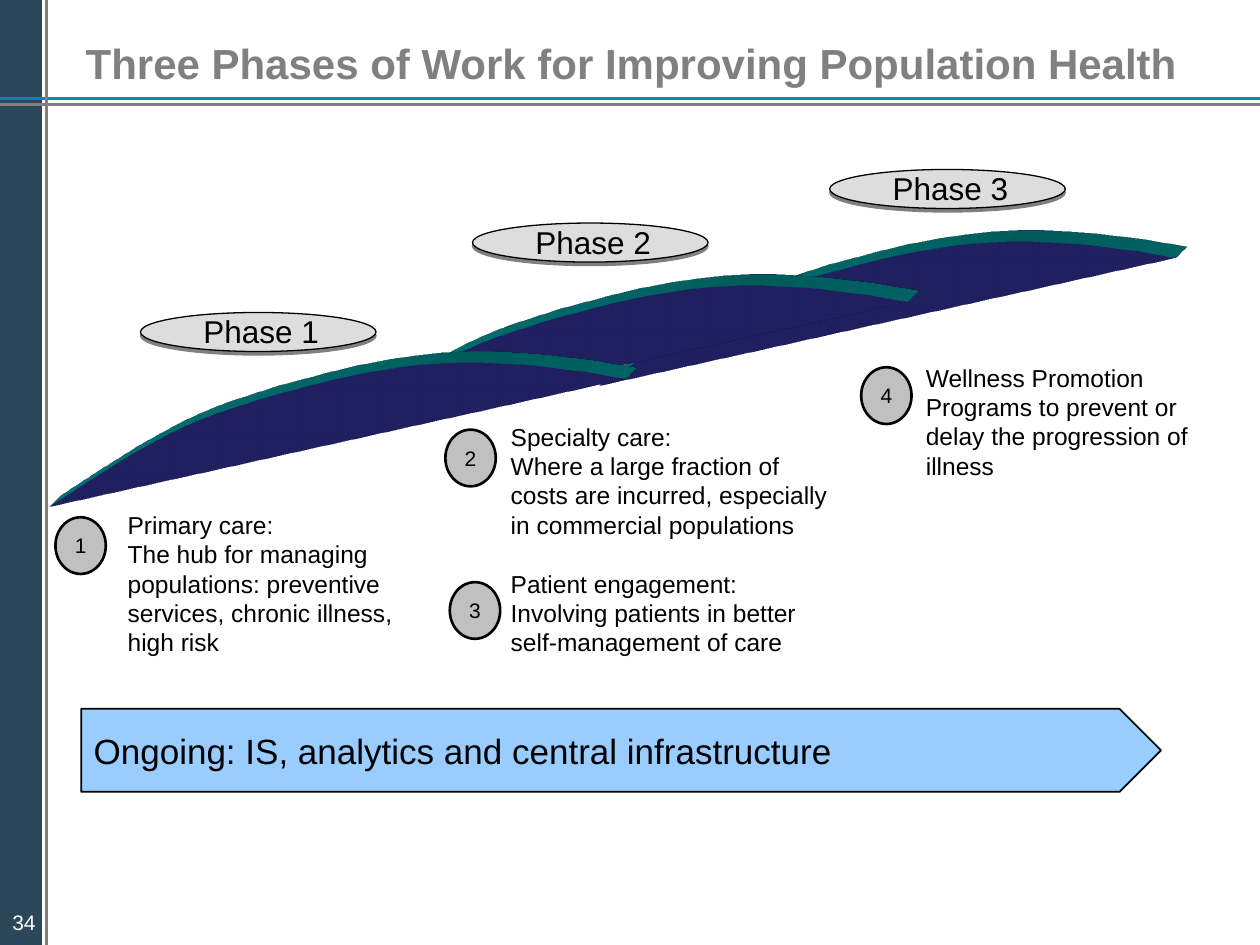
from collections import namedtuple

from lxml.etree import SubElement
from pptx import Presentation
from pptx.dml.color import RGBColor
from pptx.enum.shapes import MSO_CONNECTOR, MSO_SHAPE
from pptx.enum.text import MSO_ANCHOR, MSO_AUTO_SIZE, PP_ALIGN
from pptx.oxml.ns import qn
from pptx.util import Inches, Pt

COLUMNS, ROWS = 100, 75
WIDTH, HEIGHT = Inches(10), Inches(7.5)
COLORS = {
    "sidebar": "2C465A", "rule": "808080", "accent": "008AB0", "title": "808080",
    "hill": "2D2D8A", "ridge": "009999", "label": "DDDDDD", "shadow": "808080",
    "badge": "C0C0C0", "arrow": "99CCFF", "text": "000000", "page": "FFFFFF",
}
CREST = [(0, 1), (.09, .77), (.18, .53), (.29, .37), (.4, .22),
         (.54, .08), (.66, .04), (.78, 0), (.92, .08), (1, .14)]
NO_MARGINS = dict.fromkeys(("margin_left", "margin_right", "margin_top", "margin_bottom"), 0)

Box = namedtuple("Box", "left top width height")


def within(box, left, top, width, height):
    """Return the box covering the given shares of another box."""
    return Box(box.left + left * box.width, box.top + top * box.height,
               width * box.width, height * box.height)


def emu(box):
    """Convert a box in grid columns and rows to slide lengths."""
    return (round(box.left * WIDTH / COLUMNS), round(box.top * HEIGHT / ROWS),
            round(box.width * WIDTH / COLUMNS), round(box.height * HEIGHT / ROWS))


def set_formats(target, formats):
    """Set each named attribute of the target."""
    for name, value in formats.items():
        setattr(target, name, value)


def color(name):
    """Look up a palette colour."""
    return RGBColor.from_string(COLORS[name])


def paint(shape, fill, line_width=None, ink="text"):
    """Fill a shape and give it an outline or none."""
    shape.shadow.inherit = False
    shape.fill.solid()
    shape.fill.fore_color.rgb = color(fill)
    if line_width is None:
        shape.line.fill.background()
    else:
        shape.line.color.rgb = color(ink)
        shape.line.width = Pt(line_width)


def write(shape, lines, size, ink="text", align=PP_ALIGN.LEFT, bold=False, **frame_formats):
    """Write paragraphs with one common format."""
    frame = shape.text_frame
    set_formats(frame, {"word_wrap": True, "vertical_anchor": MSO_ANCHOR.MIDDLE,
                        "auto_size": MSO_AUTO_SIZE.NONE, **frame_formats})
    frame.text = "\n".join(lines)
    for paragraph in frame.paragraphs:
        paragraph.alignment = align
        set_formats(paragraph.font, {"name": "Arial", "size": Pt(size), "bold": bold})
        paragraph.font.color.rgb = color(ink)


def add_rule(slide, box, ink):
    """Draw a straight rule along a box with no thickness."""
    left, top, width, height = emu(box)
    rule = slide.shapes.add_connector(MSO_CONNECTOR.STRAIGHT, left, top, left + width, top + height)
    rule.line.color.rgb = color(ink)
    rule.line.width = Pt(1.5)
    SubElement(rule._element.spPr, qn("a:effectLst"))


def add_frame(slide, box, page):
    """Place the sidebar, the rules and the page number."""
    sidebar = slide.shapes.add_shape(MSO_SHAPE.RECTANGLE, *emu(within(box, 0, 0, 1 / 30, 1)))
    paint(sidebar, "sidebar")
    add_rule(slide, Box(0, 8.3, box.width, 0), "rule")
    add_rule(slide, Box(0, 7.8, box.width, 0), "accent")
    add_rule(slide, Box(3.7, 0, 0, box.height), "rule")
    number = slide.shapes.add_textbox(*emu(Box(0, 71.7, 5, 3.3)))
    write(number, [page], 12, "page", vertical_anchor=MSO_ANCHOR.TOP)


def add_title(slide, box, wording):
    """Move and format the title placeholder."""
    title = slide.shapes.title
    set_formats(title, dict(zip(("left", "top", "width", "height"), emu(box))))
    write(title, [wording], 24, "title", bold=True)


def bend(outline):
    """Turn every three straight segments into one cubic curve."""
    segments = list(outline.iterchildren(qn("a:lnTo")))
    for first in range(0, len(segments), 3):
        curve = SubElement(outline, qn("a:cubicBezTo"))
        for segment in segments[first:first + 3]:
            curve.append(segment[0])
            outline.remove(segment)


def extrude(shape, depth, ink):
    """Give a shape an oblique depth towards the top right."""
    properties = shape._element.spPr
    scene = SubElement(properties, qn("a:scene3d"))
    SubElement(scene, qn("a:camera"), prst="legacyObliqueTopRight")
    SubElement(scene, qn("a:lightRig"), rig="legacyFlat3", dir="b")
    solid = SubElement(properties, qn("a:sp3d"), extrusionH=str(depth), prstMaterial="legacyMatte")
    for bevel in ("a:bevelT", "a:bevelB"):
        SubElement(solid, qn(bevel), w="13500", h="13500", prst="angle")
    SubElement(SubElement(solid, qn("a:extrusionClr")), qn("a:srgbClr"), val=COLORS[ink])


def add_hill(slide, box):
    """Draw a curved hill whose depth forms its ridge."""
    left, top, width, height = emu(box)
    corners = [(round(left + x * width), round(top + y * height)) for x, y in CREST]
    builder = slide.shapes.build_freeform(*corners[0])
    builder.add_line_segments(corners[1:], close=False)
    hill = builder.convert_to_shape()
    bend(next(hill._element.iter(qn("a:path"))))
    paint(hill, "hill", .75, "ridge")
    extrude(hill, Inches(.25), "ridge")


def add_phase_label(slide, box, wording):
    """Group a shadowed oval with its phase name."""
    group = slide.shapes.add_group_shape()
    oval = group.shapes.add_shape(MSO_SHAPE.OVAL, *emu(box))
    paint(oval, "label", .75)
    effects = oval._element.spPr.find(qn("a:effectLst"))
    shadow = SubElement(effects, qn("a:outerShdw"), dist=str(Pt(2)), dir="5400000",
                        algn="ctr", rotWithShape="0")
    SubElement(shadow, qn("a:srgbClr"), val=COLORS["shadow"])
    name = group.shapes.add_textbox(*emu(within(box, .055, .03, .915, .9)))
    write(name, [wording], 18, align=PP_ALIGN.CENTER, **NO_MARGINS)


def add_notes(slide, box, lines, gap_before=None):
    """Write a block of notes, with a wider gap before one paragraph."""
    notes = slide.shapes.add_textbox(*emu(box))
    write(notes, lines, 14)
    if gap_before is not None:
        notes.text_frame.paragraphs[gap_before].space_before = Pt(16.8)


def add_badge(slide, box, number):
    """Draw a numbered badge."""
    badge = slide.shapes.add_shape(MSO_SHAPE.OVAL, *emu(box))
    paint(badge, "badge", 1.5)
    write(badge, [str(number)], 12, align=PP_ALIGN.CENTER, **{**NO_MARGINS, "word_wrap": False})


def add_ongoing_arrow(slide, box, wording):
    """Draw the arrow of ongoing work."""
    arrow = slide.shapes.add_shape(MSO_SHAPE.PENTAGON, *emu(box))
    arrow.adjustments[0] = .5
    paint(arrow, "arrow", 1)
    write(arrow, [wording], 20)


def main():
    """Build and save the slide."""
    deck = Presentation()
    set_formats(deck, {"slide_width": WIDTH, "slide_height": HEIGHT})
    slide = deck.slides.add_slide(deck.slide_layouts[5])
    add_frame(slide, Box(0, 0, COLUMNS, ROWS), "34")
    add_title(slide, Box(5.8, 1.65, 90, 6.7), "Three Phases of Work for Improving Population Health")
    for left, top in ((47.6, 18.8), (26.3, 22.3), (3.95, 28.4)):
        add_hill(slide, Box(left, top, 45.7, 11.8))
    for phase, (left, top) in enumerate(((11.15, 24.8), (37.5, 17.7), (65.85, 13.45)), 1):
        add_phase_label(slide, Box(left, top, 18.7, 3.1), f"Phase {phase}")
    add_notes(slide, Box(9.15, 40, 26.4, 12.6), [
        "Primary care:", "The hub for managing",
        "populations: preventive services, chronic illness,", "high risk"])
    add_notes(slide, Box(39.55, 33, 28.3, 19.6), [
        "Specialty care:",
        "Where a large fraction of costs are incurred, especially in commercial populations",
        "Patient engagement:", "Involving patients in better self-management of care"], 2)
    add_notes(slide, Box(72.5, 28.3, 23.3, 10.3), [
        "Wellness Promotion", "Programs to prevent or delay the progression of illness"])
    badge_corners = ((4.4, 41.05), (35.35, 34.1), (35.7, 46.2), (68.35, 29.15))
    for number, (left, top) in enumerate(badge_corners, 1):
        add_badge(slide, Box(left, top, 4, 4.5), number)
    add_ongoing_arrow(slide, Box(6.45, 56.25, 85.7, 6.6),
                      "Ongoing: IS, analytics and central infrastructure")
    deck.save("out.pptx")


if __name__ == "__main__":
    main()
